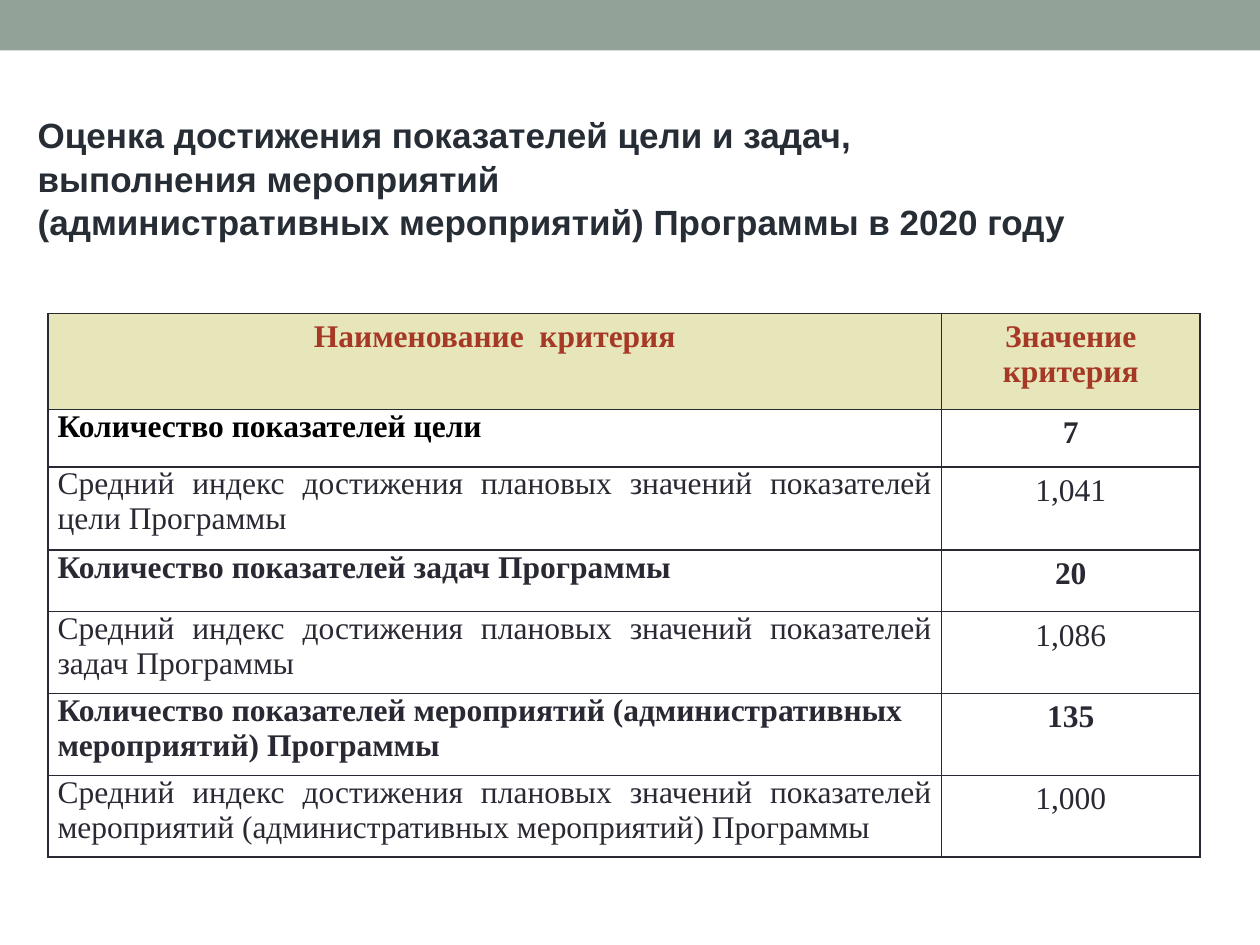
from typing import NamedTuple

from lxml.etree import SubElement
from pptx import Presentation
from pptx.dml.color import RGBColor
from pptx.enum.shapes import MSO_SHAPE as Shape
from pptx.enum.text import PP_ALIGN as Align
from pptx.oxml.ns import qn
from pptx.util import Cm, Pt

SAGE = RGBColor(0x93, 0xA2, 0x99)
SLATE = RGBColor(0x26, 0x2D, 0x35)
INK = RGBColor(0x29, 0x29, 0x34)
BLACK = RGBColor(0, 0, 0)
RUST = RGBColor(0xA5, 0x39, 0x26)
SAND = RGBColor(0xE7, 0xE5, 0xBA)

TITLE = """Оценка достижения показателей цели и задач,
выполнения мероприятий
(административных мероприятий) Программы в 2020 году"""


class Row(NamedTuple):
    name: str
    value: str
    height: float
    bold: bool = False
    color: RGBColor = INK
    align: Align = Align.JUSTIFY


HEAD = Row("Наименование  критерия", "Значение критерия", 1.93, True, RUST, Align.CENTER)
ROWS = [
    Row("Количество показателей цели", "7", 1.16, True, BLACK),
    Row("Средний индекс достижения плановых значений показателей цели Программы",
        "1,041", 1.68),
    Row("Количество показателей задач Программы", "20", 1.24, True),
    Row("Средний индекс достижения плановых значений показателей задач Программы",
        "1,086", 1.65),
    Row("Количество показателей мероприятий (административных мероприятий) Программы",
        "135", 1.65, True, align=Align.LEFT),
    Row("Средний индекс достижения плановых значений показателей мероприятий "
        "(административных мероприятий) Программы", "1,000", 1.65),
]
COLS = (18.01, 5.21)


def style(par, face: str, size: int, color: RGBColor, bold: bool) -> None:
    for run in par.runs:
        font = run.font
        font.name, font.size, font.bold = face, Pt(size), bold
        font.color.rgb = color


def add_band(slide) -> None:
    band = slide.shapes.add_shape(Shape.RECTANGLE, 0, 0, Cm(25.4), Cm(1.02))
    band.shadow.inherit = False
    band.fill.solid()
    band.fill.fore_color.rgb = SAGE
    band.line.fill.background()


def add_title(slide) -> None:
    box = slide.shapes.add_textbox(Cm(0.51), Cm(2.13), Cm(23.6), Cm(2.82))
    frame = box.text_frame
    frame.word_wrap = True
    frame.text = TITLE
    for par in frame.paragraphs:
        par.line_spacing = 1.04
        style(par, "Arial", 20, SLATE, True)


def add_edges(cell) -> None:
    """Draw a thin line on all four sides, ahead of the cell's fill."""
    props = cell._tc.get_or_add_tcPr()
    for i, tag in enumerate(("a:lnL", "a:lnR", "a:lnT", "a:lnB")):
        line = SubElement(props, qn(tag), w=str(Pt(1)))
        fill = SubElement(line, qn("a:solidFill"))
        SubElement(fill, qn("a:srgbClr"), val=str(INK))
        props.insert(i, line)


def fill_cell(cell, text: str, align: Align, color: RGBColor, bold: bool) -> None:
    cell.text_frame.text = text
    par = cell.text_frame.paragraphs[0]
    par.alignment = align
    style(par, "Times New Roman", 18, color, bold)
    cell.fill.background()
    add_edges(cell)


def add_grid(slide) -> None:
    rows = [HEAD, *ROWS]
    high = sum(row.height for row in rows)
    grid = slide.shapes.add_table(len(rows), len(COLS), Cm(0.97), Cm(6.32),
                                  Cm(sum(COLS)), Cm(high)).table
    for col, width in zip(grid.columns, COLS):
        col.width = Cm(width)
    for i, row in enumerate(rows):
        grid.rows[i].height = Cm(row.height)
        name, value = grid.cell(i, 0), grid.cell(i, 1)
        fill_cell(name, row.name, row.align, row.color, row.bold)
        tint = RUST if row is HEAD else INK
        fill_cell(value, row.value, Align.CENTER, tint, row.bold)
        if row is HEAD:
            for cell in (name, value):
                cell.fill.solid()
                cell.fill.fore_color.rgb = SAND
        else:
            name.margin_left = name.margin_right = Cm(0.19)
            name.margin_top = name.margin_bottom = 0


def main() -> None:
    deck = Presentation()
    deck.slide_width, deck.slide_height = Cm(25.4), Cm(19.05)
    slide = deck.slides.add_slide(deck.slide_layouts[6])
    add_band(slide)
    add_title(slide)
    add_grid(slide)
    deck.save("out.pptx")


if __name__ == "__main__":
    main()
